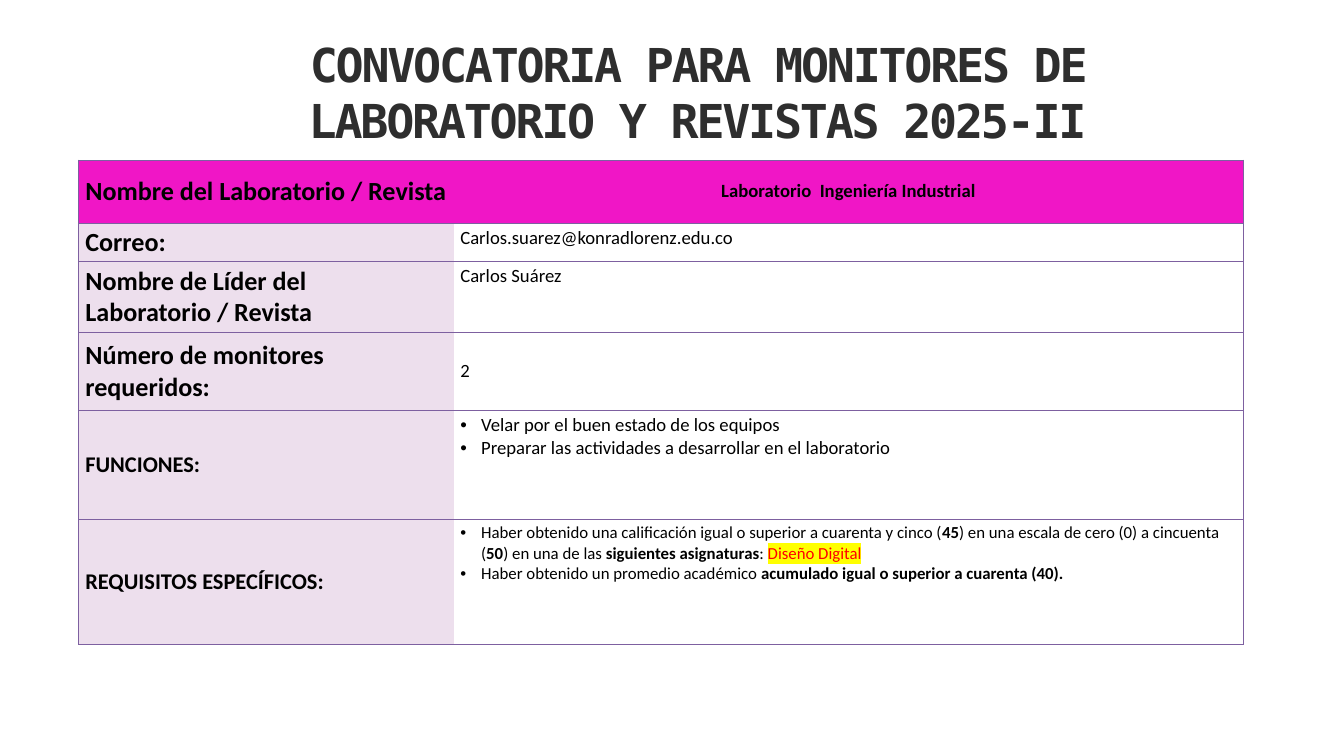
from lxml.etree import SubElement
from pptx import Presentation
from pptx.dml.color import RGBColor
from pptx.enum.text import MSO_ANCHOR, MSO_AUTO_SIZE, PP_ALIGN
from pptx.oxml.ns import qn
from pptx.util import Inches, Pt

COLORS = {"title": "2E2E2E", "text": "000000", "head": "F016C6", "label": "EDDFED",
          "value": "FFFFFF", "line": "7D60A0", "alert": "FF0000", "mark": "FFFF00"}
COLS = [5.58, 11.75]
HEIGHTS = [0.94, 0.56, 1.04, 1.16, 1.62, 1.87]

# Each row: label, label size, value size, value paragraphs made of (text, style) runs
ROWS = [
    ("Nombre del Laboratorio / Revista", 28, 20,
     [[("Laboratorio  Ingeniería Industrial", "bold")]]),
    ("Correo:", 28, 20, [[("Carlos.suarez@konradlorenz.edu.co", "")]]),
    ("Nombre de Líder del Laboratorio / Revista", 28, 20, [[("Carlos Suárez", "")]]),
    ("Número de monitores requeridos:", 28, 20, [[("2", "")]]),
    ("FUNCIONES:", 24, 20, [
        [("Velar por el buen estado de los equipos", "")],
        [("Preparar las actividades a desarrollar en el laboratorio", "")]]),
    ("REQUISITOS ESPECÍFICOS:", 24, 18, [
        [("Haber obtenido una calificación igual o superior a cuarenta y cinco (", ""),
         ("45", "bold"), (") en una escala de cero (0) a cincuenta (", ""),
         ("50", "bold"), (") en una de las ", ""),
         ("siguientes asignaturas", "bold"), (": ", ""), ("Diseño Digital", "mark")],
        [("Haber obtenido un promedio académico ", ""),
         ("acumulado igual o superior a cuarenta (40).", "bold")]]),
]


def rgb(name):
    return RGBColor.from_string(COLORS[name])


def add_run(para, text, size, style="", color="text", face="Calibri"):
    run = para.add_run()
    run.text = text
    font = run.font
    font.size = Pt(size)
    font.bold = style == "bold"
    font.color.rgb = rgb("alert" if style == "mark" else color)
    if style == "mark":
        mark = SubElement(font._element, qn("a:highlight"))
        SubElement(mark, qn("a:srgbClr"), val=COLORS["mark"])
    font.name = face
    return run


def add_bullet(para):
    props = para._p.get_or_add_pPr()
    props.set("marL", str(Inches(0.31)))
    props.set("indent", str(-Inches(0.31)))
    SubElement(props, qn("a:buFont"), typeface="Arial")
    SubElement(props, qn("a:buChar"), char="•")


def style_cell(cell, fill, outer):
    """Rule the top, bottom and outer side of a cell, then fill it."""
    props = cell._tc.get_or_add_tcPr()
    for side in ("lnL", "lnR", "lnT", "lnB"):
        line = SubElement(props, qn(f"a:{side}"), w=str(Pt(0.75)))
        if side in (outer, "lnT", "lnB"):
            paint = SubElement(line, qn("a:solidFill"))
            SubElement(paint, qn("a:srgbClr"), val=COLORS["line"])
        else:
            SubElement(line, qn("a:noFill"))
    cell.fill.solid()
    cell.fill.fore_color.rgb = rgb(fill)


def fill_value(cell, paras, size):
    frame = cell.text_frame
    for i, runs in enumerate(paras):
        para = frame.add_paragraph() if i else frame.paragraphs[0]
        if len(paras) > 1:
            add_bullet(para)
        for text, style in runs:
            add_run(para, text, size, style)


def add_title(slide, left, top, width, height):
    title = slide.shapes.title
    title.left, title.top, title.width, title.height = map(
        Inches, (left, top, width, height))
    frame = title.text_frame
    frame.word_wrap = True
    frame.auto_size = MSO_AUTO_SIZE.NONE
    frame.vertical_anchor = MSO_ANCHOR.TOP
    frame.margin_left = frame.margin_right = frame.margin_top = frame.margin_bottom = 0
    para = frame.paragraphs[0]
    para.alignment = PP_ALIGN.CENTER
    para.line_spacing = Pt(60.1)
    run = add_run(para, "CONVOCATORIA PARA MONITORES DE LABORATORIO Y REVISTAS 2025-II",
                  50, "bold", "title", "DejaVu Sans Mono")
    run.font._element.set("spc", "-240")


def add_form(slide, left, top):
    table = slide.shapes.add_table(
        len(ROWS), len(COLS), Inches(left), Inches(top),
        Inches(sum(COLS)), Inches(sum(HEIGHTS))).table
    table.horz_banding = table.first_row = False
    for col, width in zip(table.columns, COLS):
        col.width = Inches(width)
    for i, (row, height) in enumerate(zip(table.rows, HEIGHTS)):
        row.height = Inches(height)
        name, name_size, size, paras = ROWS[i]
        label, value = row.cells
        style_cell(label, "label" if i else "head", "lnL")
        style_cell(value, "value" if i else "head", "lnR")
        label.vertical_anchor = MSO_ANCHOR.MIDDLE
        add_run(label.text_frame.paragraphs[0], name, name_size, "bold")
        fill_value(value, paras, size)
    for i in (0, 3):
        table.cell(i, 1).vertical_anchor = MSO_ANCHOR.MIDDLE
    table.cell(0, 1).text_frame.paragraphs[0].alignment = PP_ALIGN.CENTER


def main():
    deck = Presentation()
    deck.slide_width, deck.slide_height = Inches(20), Inches(11.25)
    slide = deck.slides.add_slide(deck.slide_layouts[5])
    add_title(slide, 3.16, 0.53, 14.45, 2.52)
    add_form(slide, 1.17, 2.38)
    deck.save("out.pptx")


if __name__ == "__main__":
    main()
